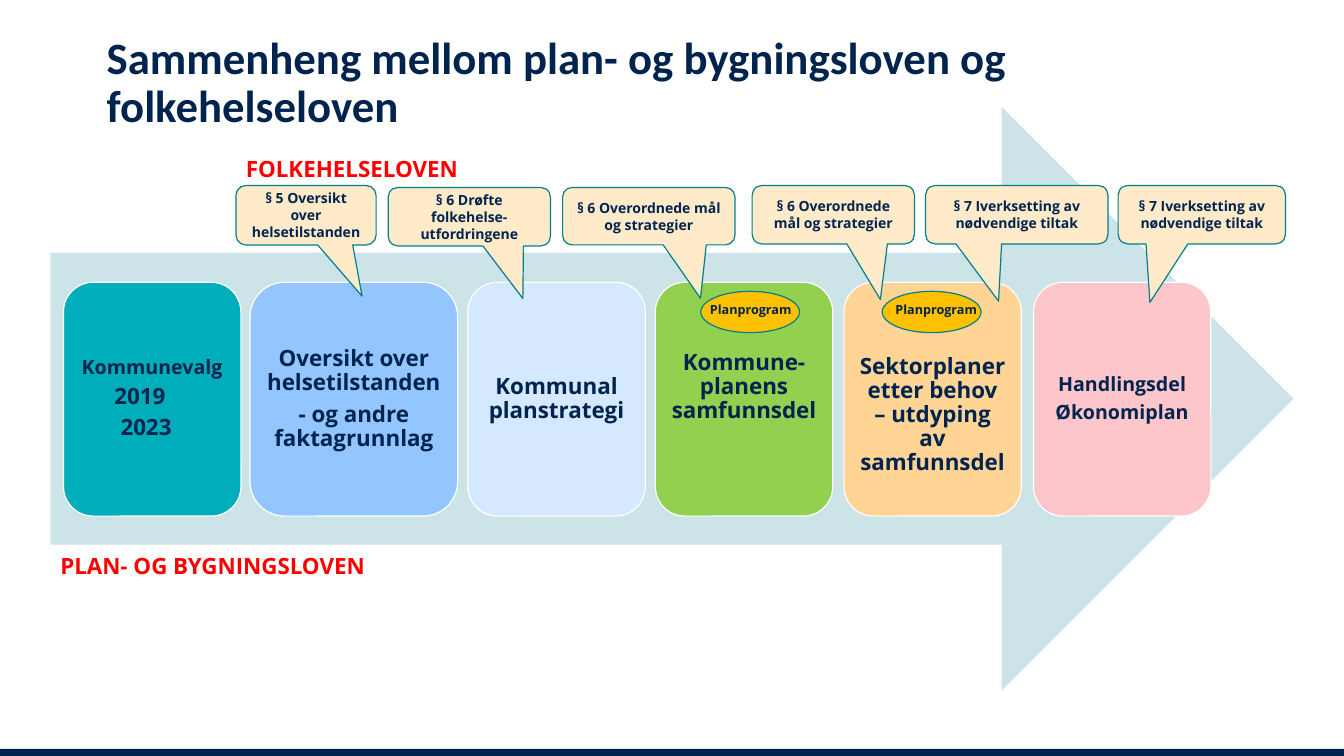
from pptx import Presentation
from pptx.dml.color import RGBColor
from pptx.enum.shapes import MSO_SHAPE
from pptx.enum.text import MSO_ANCHOR, PP_ALIGN
from pptx.util import Inches, Pt

RECTANGLE = MSO_SHAPE.RECTANGLE
ROUNDED = MSO_SHAPE.ROUNDED_RECTANGLE
ARROW = MSO_SHAPE.RIGHT_ARROW
ELLIPSE = MSO_SHAPE.OVAL
CALLOUT = MSO_SHAPE.ROUNDED_RECTANGULAR_CALLOUT
LEFT, CENTER = PP_ALIGN.LEFT, PP_ALIGN.CENTER
TOP, MIDDLE = MSO_ANCHOR.TOP, MSO_ANCHOR.MIDDLE

NAVY, TEAL, RED, WHITE = "00244E", "00808A", "FF0000", "FFFFFF"


def color(value):
    return RGBColor.from_string(value)


def write(frame, *lines, size=16, font="Open Sans", ink=NAVY, align=CENTER, anchor=MIDDLE,
          spacing=None, after=None, insets=(0.1, 0.05, 0.1, 0.05)):
    """Fill a frame; a line is a text or a (text, size, left indent) tuple."""
    frame.word_wrap = True
    frame.vertical_anchor = anchor
    frame.margin_left, frame.margin_top, frame.margin_right, frame.margin_bottom = map(Inches, insets)
    for index, line in enumerate(lines):
        text, line_size, indent = line if isinstance(line, tuple) else (line, size, 0)
        paragraph = frame.paragraphs[0] if index == 0 else frame.add_paragraph()
        paragraph.text = text
        paragraph.alignment = align
        if indent:
            paragraph.alignment = LEFT
            properties = paragraph._p.get_or_add_pPr()
            properties.set("marL", str(Inches(indent)))
            properties.set("indent", "0")
        if spacing:
            paragraph.line_spacing = spacing
        if after:
            paragraph.space_after = Pt(after)
        paragraph.font.size = Pt(line_size)
        paragraph.font.name = font
        paragraph.font.bold = True
        paragraph.font.color.rgb = color(ink)


class SlideBuilder:
    step_top, step_height = 2.8, 2.32
    line_width = 0.85

    def __init__(self, presentation):
        self.slide = presentation.slides.add_slide(presentation.slide_layouts[6])

    def shape(self, kind, left, top, width, height, fill, line=None):
        shape = self.slide.shapes.add_shape(
            kind, Inches(left), Inches(top), Inches(width), Inches(height))
        shape.shadow.inherit = False
        shape.fill.solid()
        shape.fill.fore_color.rgb = color(fill)
        if line:
            shape.line.color.rgb = color(line)
            shape.line.width = Pt(self.line_width)
        else:
            shape.line.fill.background()
        return shape

    def label(self, left, top, width, height, text, **text_format):
        box = self.slide.shapes.add_textbox(
            Inches(left), Inches(top), Inches(width), Inches(height))
        write(box.text_frame, text, **text_format)

    def step(self, left, width, fill, lines, size=16, side=0.07, extra_top=0, extra_bottom=0):
        shape = self.shape(ROUNDED, left, self.step_top, width, self.step_height, fill, WHITE)
        write(shape.text_frame, *lines, size=size, spacing=0.9, after=0.35 * size,
              insets=(side, 0.07 + extra_top, side, 0.07 + extra_bottom))

    def callout(self, left, top, width, height, tip_x, tip_y, text):
        shape = self.shape(CALLOUT, left, top, width, height, "FFEACA", TEAL)
        shape.adjustments[0], shape.adjustments[1] = tip_x, tip_y
        write(shape.text_frame, text, size=10)

    def plan_program(self, left, label_left):
        self.shape(ELLIPSE, left, 2.89, 0.98, 0.41, "FFC000", TEAL)
        self.label(label_left, 2.95, 1.05, 0.25, "Planprogram", size=9, anchor=TOP)


def main():
    presentation = Presentation()
    presentation.slide_width, presentation.slide_height = Inches(13.33), Inches(7.5)
    builder = SlideBuilder(presentation)

    # Footer bar, title and background arrow
    builder.shape(RECTANGLE, 0, 7.43, 13.33, 0.07, NAVY)
    builder.label(0.96, 0.11, 11.5, 1.45,
                  "Sammenheng mellom plan- og bygningsloven og folkehelseloven",
                  size=32, font="Calibri", align=LEFT, spacing=0.9)
    builder.shape(ARROW, 0.5, 1.06, 12.33, 5.79, "CCE3E7")

    # Planning steps
    builder.step(0.63, 1.76, "00ADBA",
                 ["Kommunevalg", ("2019", 16, 0.35), ("2023", 16, 0.41)], size=14)
    builder.step(2.48, 2.06, "93C5FF",
                 ["Oversikt over helsetilstanden", "- og andre faktagrunnlag"], side=0.03)
    builder.step(4.64, 1.76, "D4E8FF", ["Kommunal planstrategi"])
    builder.step(6.5, 1.76, "92D050", ["Kommune-planens samfunnsdel"], extra_bottom=0.24)
    builder.step(8.37, 1.76, "FFD494",
                 ["Sektorplaner etter behov – utdyping av samfunnsdel"], extra_top=0.32)
    builder.step(10.25, 1.76, "FCC6CB", ["Handlingsdel", "Økonomiplan"], size=14)

    # Plan programme markers
    builder.plan_program(6.95, 6.92)
    builder.plan_program(8.75, 8.76)

    # Public health act callouts
    goals = "§ 6 Overordnede mål og strategier"
    measures = "§ 7 Iverksetting av nødvendige tiltak"
    for callout in [
        (2.34, 1.84, 1.39, 0.59, 0.4, 1.36, "§ 5 Oversikt over helsetilstanden"),
        (3.85, 1.86, 1.61, 0.58, 0.33, 1.4, "§ 6 Drøfte folkehelse-utfordringene"),
        (5.58, 1.86, 1.71, 0.57, 0.3, 1.43, goals),
        (7.46, 1.84, 1.61, 0.58, 0.29, 1.45, goals),
        (9.18, 1.84, 1.81, 0.58, -0.1, 1.48, measures),
        (11.09, 1.84, 1.66, 0.58, -0.31, 1.5, measures),
    ]:
        builder.callout(*callout)

    # Names of the two acts
    builder.label(0.5, 5.43, 3.45, 0.37, "PLAN- OG BYGNINGSLOVEN", ink=RED, align=LEFT, anchor=TOP)
    builder.label(2.34, 1.49, 2.68, 0.37, "FOLKEHELSELOVEN", ink=RED, align=LEFT, anchor=TOP)

    presentation.save("out.pptx")


if __name__ == "__main__":
    main()
